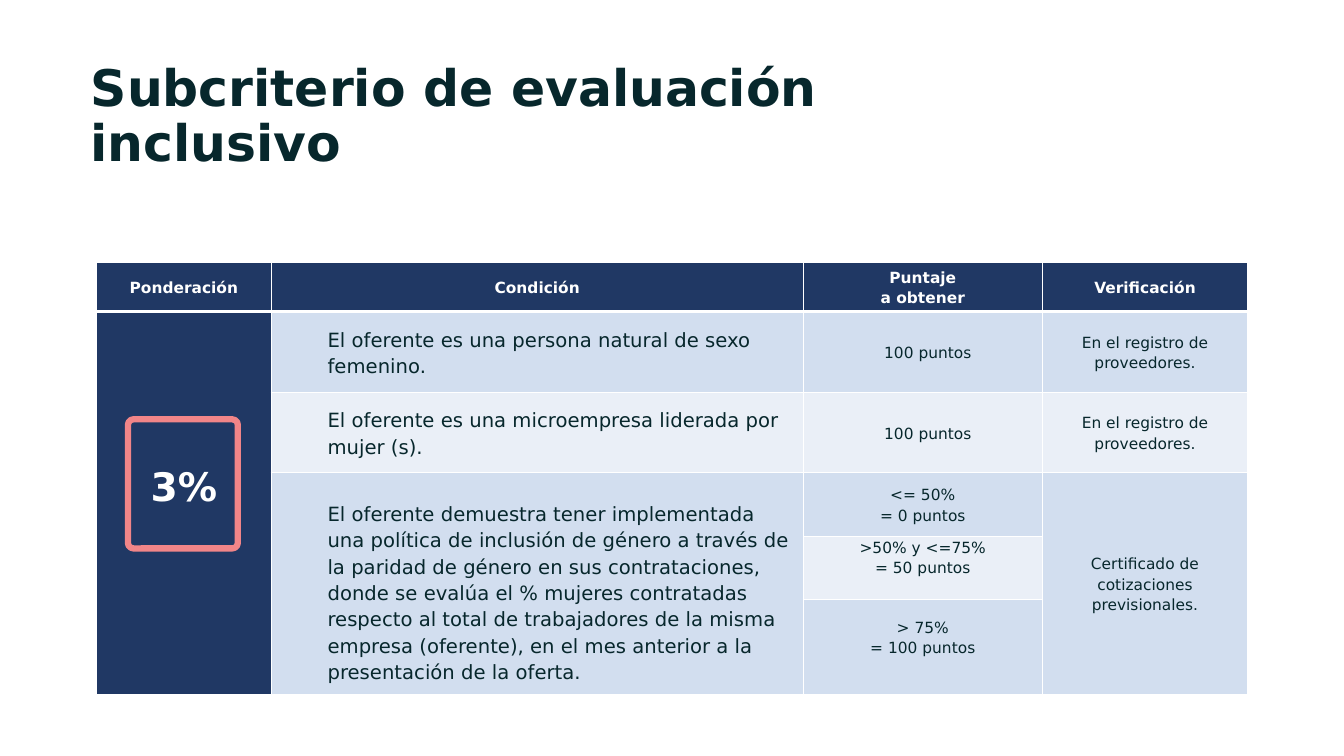
from lxml.etree import SubElement
from pptx import Presentation
from pptx.dml.color import RGBColor
from pptx.enum.shapes import MSO_SHAPE
from pptx.enum.text import MSO_ANCHOR, MSO_AUTO_SIZE, PP_ALIGN
from pptx.oxml.ns import qn
from pptx.util import Pt

WHITE = RGBColor(0xFF, 0xFF, 0xFF)
INK = RGBColor(0x07, 0x27, 0x2C)
NAVY = RGBColor(0x20, 0x38, 0x64)
BLUE = RGBColor(0xD2, 0xDE, 0xEF)
PALE = RGBColor(0xEA, 0xEF, 0xF7)
CORAL = RGBColor(0xF1, 0x85, 0x88)
FONT = "DejaVu Sans"

COLUMN_WIDTHS = (124.6, 380.2, 170.6, 146.9)
ROW_HEIGHTS = (35.3, 57.6, 57.6, 45.4, 45.4, 67.7)

# Text formats; margins are added to the usual cell inset
HEADER = dict(size=11, bold=True, color=WHITE, fill=NAVY)
WEIGHT = dict(HEADER, size=28, bottom=27)
CONDITION = dict(size=14, left=36, align=PP_ALIGN.LEFT)
LONG_CONDITION = dict(CONDITION, top=19, anchor=MSO_ANCHOR.TOP)
SCORE = dict(left=7.2)
MIDDLE_BAND = dict(anchor=MSO_ANCHOR.TOP, fill=PALE)
TOP_BAND = dict(bottom=14.6)
PLAIN = {}

# Row, column, rows spanned, lines of text, format
CELLS = (
    (0, 0, 1, ["Ponderación"], HEADER),
    (0, 1, 1, ["Condición"], HEADER),
    (0, 2, 1, ["Puntaje", "a obtener"], HEADER),
    (0, 3, 1, ["Verificación"], HEADER),
    (1, 0, 5, ["3%"], WEIGHT),
    (1, 1, 1, ["El oferente es una persona natural de sexo femenino."], CONDITION),
    (1, 2, 1, ["100 puntos"], SCORE),
    (1, 3, 1, ["En el registro de proveedores."], PLAIN),
    (2, 1, 1, ["El oferente es una microempresa liderada por mujer (s)."],
     dict(CONDITION, fill=PALE)),
    (2, 2, 1, ["100 puntos"], dict(SCORE, fill=PALE)),
    (2, 3, 1, ["En el registro de proveedores."], dict(fill=PALE)),
    (3, 1, 3, ["El oferente demuestra tener implementada una política de "
               "inclusión de género a través de la paridad de género en sus "
               "contrataciones, donde se evalúa el % mujeres contratadas "
               "respecto al total de trabajadores de la misma empresa "
               "(oferente), en el mes anterior a la presentación de la "
               "oferta."], LONG_CONDITION),
    (3, 2, 1, ["<= 50%", "= 0 puntos"], PLAIN),
    (3, 3, 3, ["Certificado de cotizaciones previsionales."], PLAIN),
    (4, 2, 1, [">50% y <=75%", "= 50 puntos"], MIDDLE_BAND),
    (5, 2, 1, ["> 75%", "= 100 puntos"], TOP_BAND),
)


def write_lines(frame, lines, align, spacing, size, bold, color):
    frame.text = "\n".join(lines)
    for paragraph in frame.paragraphs:
        paragraph.alignment = align
        paragraph.line_spacing = spacing
        font_format = dict(name=FONT, size=Pt(size), bold=bold)
        for name, value in font_format.items():
            setattr(paragraph.runs[0].font, name, value)
        paragraph.runs[0].font.color.rgb = color


def add_borders(cell, row):
    properties = cell._tc.get_or_add_tcPr()
    widths = dict(L=1, R=1, T=3 if row == 1 else 1, B=3 if row == 0 else 1)
    for side, width in widths.items():
        line = SubElement(properties, qn(f"a:ln{side}"), w=str(Pt(width)))
        fill = SubElement(line, qn("a:solidFill"))
        SubElement(fill, qn("a:srgbClr"), val=str(WHITE))


def fill_cell(cell, lines, style):
    cell.fill.solid()
    cell.fill.fore_color.rgb = style.get("fill", BLUE)
    cell_format = dict(
        margin_left=Pt(4.3 + style.get("left", 0)),
        margin_right=Pt(4.3),
        margin_top=Pt(style.get("top", 0)),
        margin_bottom=Pt(style.get("bottom", 0)),
        vertical_anchor=style.get("anchor", MSO_ANCHOR.MIDDLE),
    )
    for name, value in cell_format.items():
        setattr(cell, name, value)
    write_lines(cell.text_frame, lines, style.get("align", PP_ALIGN.CENTER), 1.15,
                style.get("size", 11), style.get("bold", False),
                style.get("color", INK))


def add_heading(slide):
    heading = slide.shapes.title
    place = dict(left=57.6, top=61.2, width=729.4, height=45.4)
    for name, value in place.items():
        setattr(heading, name, Pt(value))
    frame = heading.text_frame
    frame_format = dict(word_wrap=True, auto_size=MSO_AUTO_SIZE.NONE,
                        vertical_anchor=MSO_ANCHOR.MIDDLE)
    for name, value in frame_format.items():
        setattr(frame, name, value)
    write_lines(frame, ["Subcriterio de evaluación", "inclusivo"],
                PP_ALIGN.LEFT, 0.9, 36, True, INK)


def add_criteria_table(slide):
    criteria = slide.shapes.add_table(
        len(ROW_HEIGHTS), len(COLUMN_WIDTHS), Pt(69.1), Pt(187.2),
        Pt(sum(COLUMN_WIDTHS)), Pt(sum(ROW_HEIGHTS))).table
    for column, width in zip(criteria.columns, COLUMN_WIDTHS):
        column.width = Pt(width)
    for index, (row, height) in enumerate(zip(criteria.rows, ROW_HEIGHTS)):
        row.height = Pt(height)
        for cell in row.cells:
            add_borders(cell, index)
    for row, column, span, lines, style in CELLS:
        cell = criteria.cell(row, column)
        if span > 1:
            cell.merge(criteria.cell(row + span - 1, column))
        fill_cell(cell, lines, style)


def add_weight_frame(slide):
    frame = slide.shapes.add_shape(MSO_SHAPE.ROUNDED_RECTANGLE,
                                   Pt(91.4), Pt(299.5), Pt(78.5), Pt(92.2))
    frame.adjustments[0] = 0.05
    frame.shadow.inherit = False
    frame.fill.background()
    frame.line.color.rgb = CORAL
    frame.line.width = Pt(4.5)


def main():
    presentation = Presentation()
    presentation.slide_width = Pt(960)
    presentation.slide_height = Pt(540)
    slide = presentation.slides.add_slide(presentation.slide_layouts[5])
    add_heading(slide)
    add_criteria_table(slide)
    add_weight_frame(slide)
    presentation.save("out.pptx")


if __name__ == "__main__":
    main()
